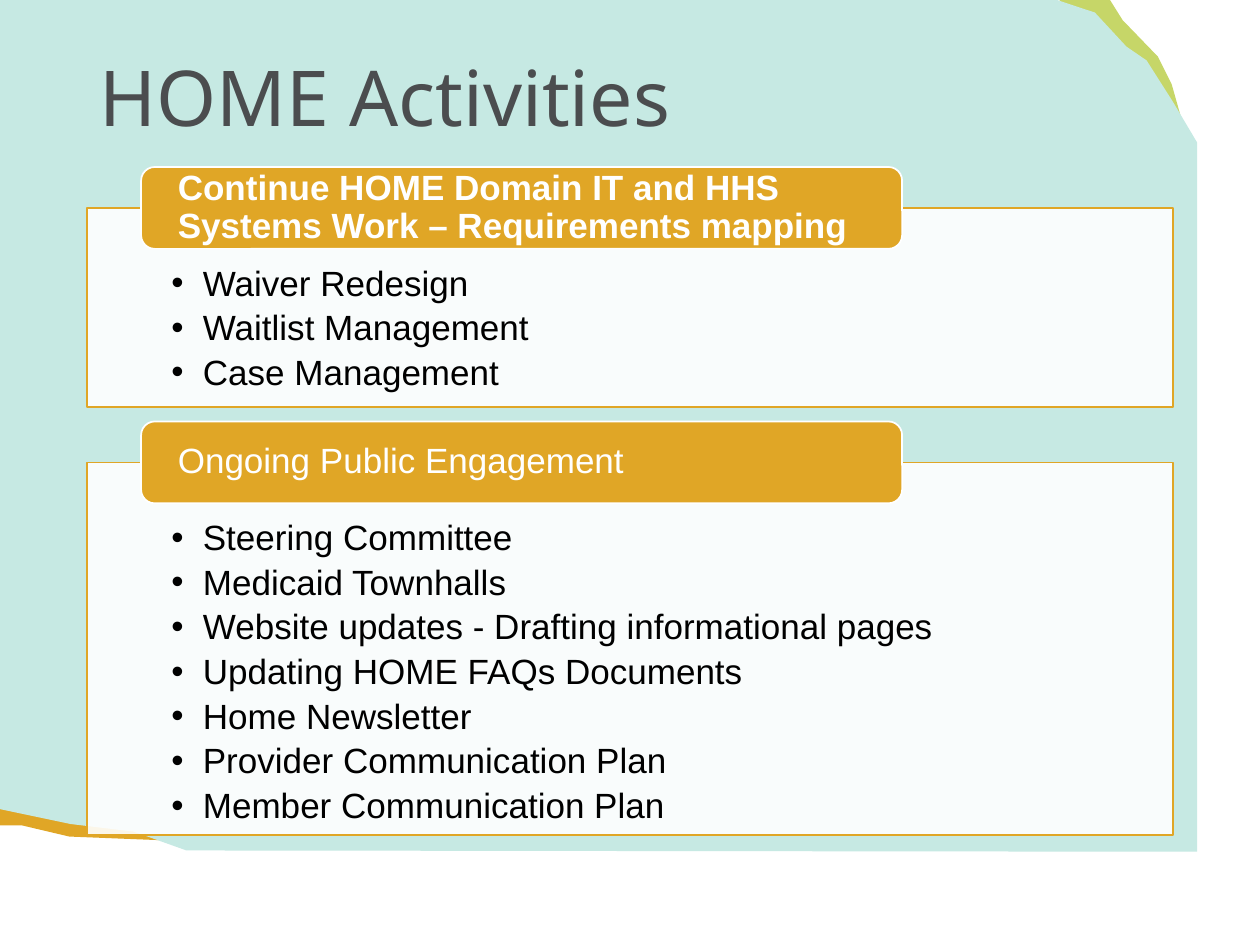
from lxml import etree
from pptx import Presentation
from pptx.dml.color import RGBColor
from pptx.enum.shapes import MSO_SHAPE as Preset
from pptx.enum.text import MSO_ANCHOR as Anchor, MSO_AUTO_SIZE as AutoSize, PP_ALIGN as Align
from pptx.oxml.ns import qn
from pptx.util import Inches, Pt

COLORS = {
    "gold": "E0A626", "lime": "C6D668", "mint": "C6E9E3",
    "white": "FFFFFF", "black": "000000", "gray": "4B4D4F",
}
TITLE_FONT = {"name": "Noto Sans", "size": Pt(44), "bold": False}
TEXT_FONT = {"name": "Arial", "size": Pt(20), "bold": False}
HEADING_FONT = {**TEXT_FONT, "bold": True}

# Background pieces, back to front: colour and corner points
BACKDROP = [
    ("gold", [(-0.01, 6.29), (0.38, 6.27), (1.31, 6.35), (1.31, 6.67),
              (0.55, 6.64), (0.17, 6.55), (-0.01, 6.55)]),
    ("lime", [(8.47, 0.43), (8.41, 0), (8.81, 0), (8.91, 0.16),
              (9.19, 0.45), (9.3, 0.67), (9.41, 1.06)]),
    ("mint", [(0, 0), (8.36, -0.01), (8.69, 0.1), (8.94, 0.37), (9.1, 0.48),
              (9.31, 0.81), (9.5, 1.13), (9.5, 6.76), (1.48, 6.75),
              (1.06, 6.6), (0.56, 6.54), (-0.01, 6.42)]),
]

# Sections: panel top and height, heading, heading font, list items
SECTIONS = [
    (1.65, 1.58, "Continue HOME Domain IT and HHS Systems Work – Requirements mapping",
     HEADING_FONT, ["Waiver Redesign", "Waitlist Management", "Case Management"]),
    (3.67, 2.96, "Ongoing Public Engagement", TEXT_FONT,
     ["Steering Committee", "Medicaid Townhalls",
      "Website updates - Drafting informational pages",
      "Updating HOME FAQs Documents", "Home Newsletter",
      "Provider Communication Plan", "Member Communication Plan"]),
]
LEFT, WIDTH = 0.69, 8.62
TAB_LEFT, TAB_WIDTH, TAB_HEIGHT = 1.12, 6.04, 0.65


def rgb(color):
    return RGBColor.from_string(COLORS[color])


def set_values(target, values):
    for name, value in values.items():
        setattr(target, name, value)


def place(box, left, top, width, height):
    set_values(box, {"left": Inches(left), "top": Inches(top),
                     "width": Inches(width), "height": Inches(height)})


def paint(box, fill, line=None):
    box.fill.solid()
    box.fill.fore_color.rgb = rgb(fill)
    if line:
        box.line.color.rgb = rgb(line)
        box.line.width = Pt(1)
    else:
        box.line.fill.background()


def set_frame(frame, anchor, side=0.1, top=0.05, bottom=0.05):
    set_values(frame, {
        "word_wrap": True, "auto_size": AutoSize.NONE, "vertical_anchor": anchor,
        "margin_left": Inches(side), "margin_right": Inches(side),
        "margin_top": Inches(top), "margin_bottom": Inches(bottom)})


def write(para, text, font, color, after=0):
    para.text = text
    set_values(para, {"alignment": Align.LEFT, "line_spacing": 0.9,
                      "space_before": Pt(0), "space_after": Pt(after)})
    set_values(para.font, font)
    para.font.color.rgb = rgb(color)


def add_bullet(para):
    properties = para._p.get_or_add_pPr()
    properties.set("marL", str(Inches(0.25)))
    properties.set("indent", str(-Inches(0.25)))
    etree.SubElement(properties, qn("a:buFont")).set("typeface", "Arial")
    etree.SubElement(properties, qn("a:buChar")).set("char", "•")


def bring_to_front(box):
    box.element.getparent().append(box.element)


def add_outline(page, color, points):
    corners = [(Inches(x), Inches(y)) for x, y in points]
    builder = page.shapes.build_freeform(*corners[0])
    builder.add_line_segments(corners[1:], close=True)
    shape = builder.convert_to_shape()
    shape.shadow.inherit = False
    paint(shape, color)


def fill_title(box, text):
    place(box, LEFT, 0.4, WIDTH, 0.81)
    set_frame(box.text_frame, Anchor.MIDDLE)
    write(box.text_frame.paragraphs[0], text, TITLE_FONT, "gray")
    bring_to_front(box)


def fill_panel(box, top, height, items):
    place(box, LEFT, top, WIDTH, height)
    paint(box, "white", "gold")
    tint = box.element.spPr.find(qn("a:solidFill"))[0]
    etree.SubElement(tint, qn("a:alpha")).set("val", "90000")
    frame = box.text_frame
    set_frame(frame, Anchor.TOP, side=0.67, top=0.46, bottom=0.16)
    for number, item in enumerate(items):
        para = frame.add_paragraph() if number else frame.paragraphs[0]
        para.level = 1
        add_bullet(para)
        write(para, item, TEXT_FONT, "black", after=3.9)
    bring_to_front(box)


def add_heading(page, panel_top, text, font):
    # The heading tab straddles the top edge of its panel
    top = panel_top - TAB_HEIGHT / 2
    tab = page.shapes.add_shape(
        Preset.ROUNDED_RECTANGLE, Inches(TAB_LEFT), Inches(top),
        Inches(TAB_WIDTH), Inches(TAB_HEIGHT))
    tab.shadow.inherit = False
    paint(tab, "gold", "white")
    set_frame(tab.text_frame, Anchor.MIDDLE, side=0.26, top=0, bottom=0)
    write(tab.text_frame.paragraphs[0], text, font, "white")


def main():
    deck = Presentation()
    deck.slide_width, deck.slide_height = Inches(10), Inches(7.5)
    page = deck.slides.add_slide(deck.slide_layouts.get_by_name("Two Content"))
    title, *panels = page.placeholders

    # Background
    for color, points in BACKDROP:
        add_outline(page, color, points)

    # Title and sections
    fill_title(title, "HOME Activities")
    for panel, (top, height, heading, font, items) in zip(panels, SECTIONS):
        fill_panel(panel, top, height, items)
        add_heading(page, top, heading, font)

    deck.save("out.pptx")


if __name__ == "__main__":
    main()
